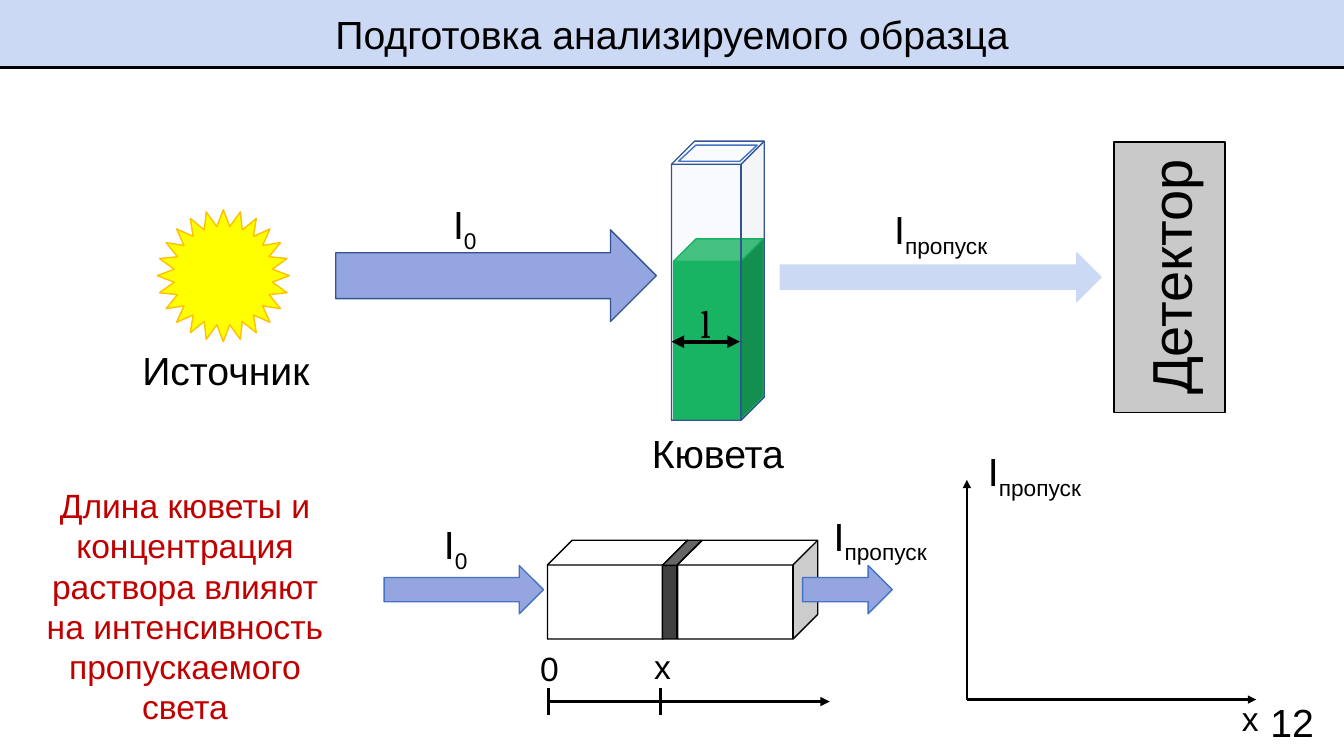
from dataclasses import dataclass
from lxml.etree import SubElement
from pptx import Presentation
from pptx.dml.color import RGBColor
from pptx.enum.shapes import MSO_CONNECTOR, MSO_SHAPE
from pptx.enum.text import MSO_ANCHOR, PP_ALIGN
from pptx.oxml.ns import qn
from pptx.util import Emu, Pt


@dataclass(frozen=True)
class Theme:
    ink: str = "000000"
    white: str = "FFFFFF"
    pale: str = "CCD9F5"
    beam: str = "95A5E0"
    navy: str = "325491"
    blue: str = "4472C4"
    grey: str = "C9C9C9"
    layer: str = "404040"
    sun: str = "FFFF00"
    sun_edge: str = "FFC000"
    liquid: str = "00B050"
    accent: str = "C00000"
    font: str = "Arial"
    symbol_font: str = "Cambria"
    note: int = 24
    label: int = 28
    detector: int = 40


THEME = Theme()
PX = 9144  # 100 px to the inch
PAGE_W, PAGE_H = 1333, 750
BAND_H = 67

TITLE = "Подготовка анализируемого образца"
DETECTOR = "Детектор"
PAGE_NUMBER = "12"
NOTE = ("Длина кюветы и концентрация раствора влияют "
        "на интенсивность пропускаемого света")

TITLE_BAND = (0, 0, PAGE_W, BAND_H)
DETECTOR_BOX = (1105, 141, 110, 268)
CUVETTE = (666, 140, 92, 277)
NUMBER_BOX = (1013, 696, 300, 40)
NOTE_BOX = (20, 476, 327, 252)

# preset, box, fill, outline
SOURCE_AND_BEAMS = [
    (MSO_SHAPE.RIGHT_ARROW, (333, 228, 318, 91), THEME.beam, THEME.navy),
    (MSO_SHAPE.RIGHT_ARROW, (774, 251, 318, 48), THEME.pale, THEME.pale),
    (MSO_SHAPE.STAR_24_POINT, (156, 208, 131, 131), THEME.sun, THEME.sun_edge),
    (MSO_SHAPE.CUBE, (668, 237, 89, 179), THEME.liquid, THEME.liquid),
]
# left, width, fill, depth of the cube
SAMPLE_TOP, SAMPLE_H = 536, 98
SAMPLE = [
    (543, 139, THEME.white, 0.25),
    (657, 39, THEME.layer, 0.64),
    (672, 139, THEME.white, 0.25),
]
SAMPLE_BEAMS = [(381, 158), (796, 89)]  # left, width
BEAM_TOP, BEAM_H = 561, 48

# start, end, width in points, arrowheads
AXIS_Y, TICK = 696, 13
AXIS_X, TICKS_X = 544, (544, 655)
ORIGIN = (959, 694)
LINES = [
    ((0, BAND_H), (PAGE_W, BAND_H), 1.5, ()),
    ((666, 339), (734, 339), 3, ("headEnd", "tailEnd")),
    ((AXIS_X, AXIS_Y), (823, AXIS_Y), 2.25, ("tailEnd",)),
    *[((x, AXIS_Y + TICK), (x, AXIS_Y - TICK), 2.25, ()) for x in TICKS_X],
    (ORIGIN, (ORIGIN[0], 476), 1.5, ("tailEnd",)),
    (ORIGIN, (1246, ORIGIN[1]), 1.5, ("tailEnd",)),
]

# text, left, top, width, font
LABELS = [
    ("Источник", 94, 339, 260, THEME.font),
    ("Кювета", 378, 421, 668, THEME.font),
    ("l", 366, 292, 668, THEME.symbol_font),
]
INTENSITIES = [  # subscript, left, top, width
    ("0", 411, 194, 100),
    ("пропуск", 856, 199, 154),
    ("0", 402, 511, 100),
    ("пропуск", 796, 503, 154),
    ("пропуск", 949, 439, 154),
]
AXIS_MARKS = [("0", 490, 638), ("x", 602, 636), ("x", 1185, 687)]
LABEL_H, MARK_W, MARK_H = 57, 110, 50


def scaled(lengths):
    return [Emu(length * PX) for length in lengths]


def style_span(span, size, color, font):
    span.font.size = Pt(size)
    span.font.name = font
    span.font.color.rgb = RGBColor.from_string(color)


def write(shape, text, size, color=THEME.ink, font=THEME.font,
          align=PP_ALIGN.CENTER, anchor=MSO_ANCHOR.TOP):
    frame = shape.text_frame
    frame.word_wrap = True
    frame.vertical_anchor = anchor
    frame.text = text
    para = frame.paragraphs[0]
    para.alignment = align
    style_span(para.runs[0], size, color, font)
    return para


def add_text(page, box, text, size, **look):
    return write(page.shapes.add_textbox(*scaled(box)), text, size, **look)


def add_figure(page, preset, box, fill, outline, depth=None):
    """Add a preset shape; fill or outline may be None, depth is its adjustment."""
    shape = page.shapes.add_shape(preset, *scaled(box))
    shape.shadow.inherit = False
    if depth is not None:
        shape.adjustments[0] = depth
    if fill:
        shape.fill.solid()
        shape.fill.fore_color.rgb = RGBColor.from_string(fill)
    else:
        shape.fill.background()
    if outline:
        shape.line.color.rgb = RGBColor.from_string(outline)
        shape.line.width = Pt(1)
    else:
        shape.line.fill.background()
    return shape


def add_line(page, start, end, width, heads):
    line = page.shapes.add_connector(MSO_CONNECTOR.STRAIGHT, *scaled(start + end))
    line.line.color.rgb = RGBColor.from_string(THEME.ink)
    line.line.width = Pt(width)
    for head in heads:
        SubElement(line.line._get_or_add_ln(), qn("a:" + head), type="triangle")
    SubElement(line._element.spPr, qn("a:effectLst"))


def add_title(page):
    band = add_figure(page, MSO_SHAPE.RECTANGLE, TITLE_BAND, THEME.pale, None)
    write(band, TITLE, THEME.label)
    frame = band.text_frame
    frame.margin_top = frame.margin_bottom = Emu(10 * PX)


def add_detector(page):
    detector = add_figure(page, MSO_SHAPE.RECTANGLE, DETECTOR_BOX, THEME.grey, THEME.ink)
    write(detector, DETECTOR, THEME.detector, anchor=MSO_ANCHOR.MIDDLE)
    detector.text_frame._txBody.bodyPr.set("vert", "vert270")


def add_cuvette(page):
    glass = add_figure(page, MSO_SHAPE.CUBE, CUVETTE, THEME.pale, THEME.navy)
    color = glass._element.spPr.find(qn("a:solidFill"))[0]
    SubElement(color, qn("a:alpha"), val="12000")
    left, top, width, _ = CUVETTE
    rim = (left + 7, top + 4, width - 14, 16)
    add_figure(page, MSO_SHAPE.PARALLELOGRAM, rim, None, THEME.blue, 1.07)


def add_intensity(page, subscript, left, top, width):
    para = add_text(page, (left, top, width, LABEL_H), "I", THEME.label)
    span = para.add_run()
    span.text = subscript
    style_span(span, THEME.label, THEME.ink, THEME.font)
    span._r.get_or_add_rPr().set("baseline", "-25000")


def main():
    deck = Presentation()
    deck.slide_width, deck.slide_height = scaled((PAGE_W, PAGE_H))
    page = deck.slides.add_slide(deck.slide_layouts[6])

    add_title(page)
    for figure in SOURCE_AND_BEAMS:
        add_figure(page, *figure)
    add_cuvette(page)
    add_detector(page)
    for left, width, fill, depth in SAMPLE:
        box = (left, SAMPLE_TOP, width, SAMPLE_H)
        add_figure(page, MSO_SHAPE.CUBE, box, fill, THEME.ink, depth)
    for left, width in SAMPLE_BEAMS:
        box = (left, BEAM_TOP, width, BEAM_H)
        add_figure(page, MSO_SHAPE.RIGHT_ARROW, box, THEME.beam, THEME.blue)
    for line in LINES:
        add_line(page, *line)

    for text, left, top, width, font in LABELS:
        add_text(page, (left, top, width, LABEL_H), text, THEME.label, font=font)
    for intensity in INTENSITIES:
        add_intensity(page, *intensity)
    for text, left, top in AXIS_MARKS:
        add_text(page, (left, top, MARK_W, MARK_H), text, THEME.note)
    add_text(page, NOTE_BOX, NOTE, THEME.note, color=THEME.accent)
    add_text(page, NUMBER_BOX, PAGE_NUMBER, THEME.label,
             align=PP_ALIGN.RIGHT, anchor=MSO_ANCHOR.MIDDLE)
    deck.save("out.pptx")


if __name__ == "__main__":
    main()
